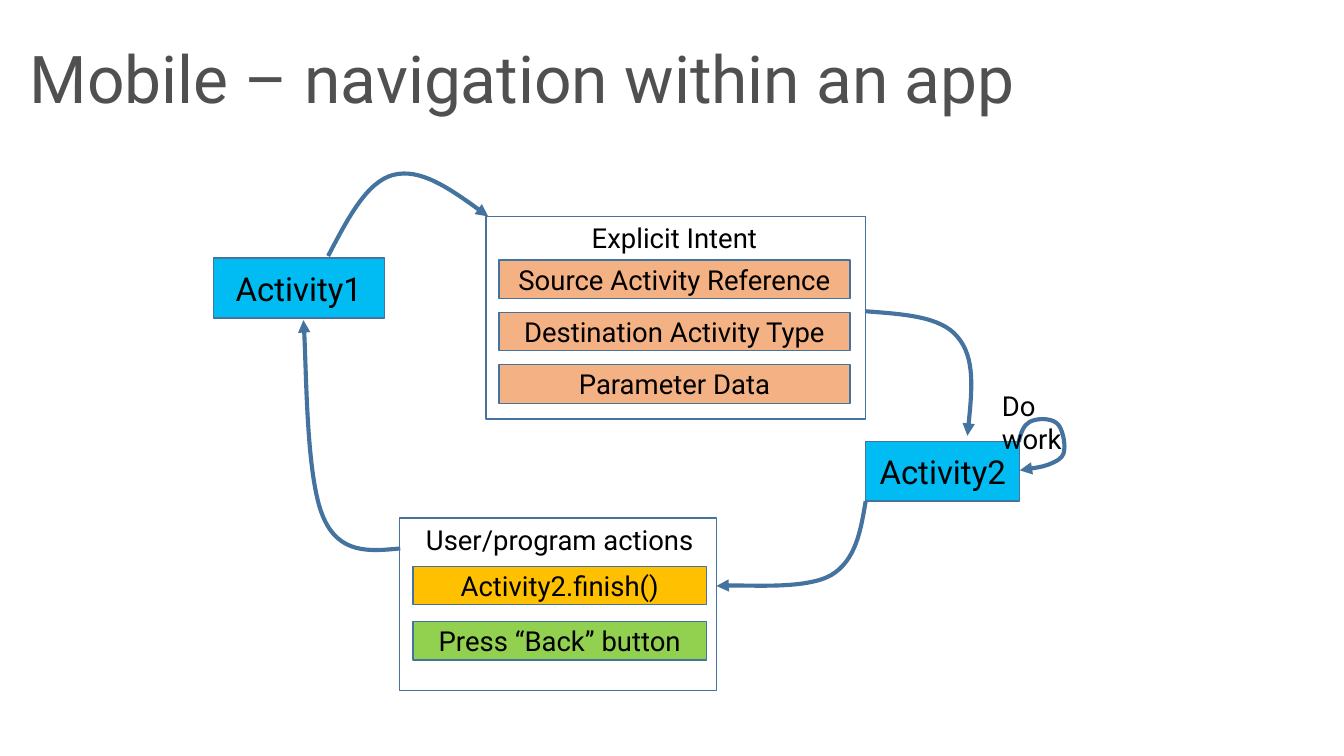
"""Build the slide that shows navigation between two activities of an app."""
from lxml import etree
from pptx import Presentation
from pptx.dml.color import RGBColor
from pptx.enum.shapes import MSO_SHAPE
from pptx.enum.text import MSO_ANCHOR, PP_ALIGN
from pptx.oxml.ns import qn
from pptx.util import Inches, Pt

RECTANGLE = MSO_SHAPE.RECTANGLE
TOP, MIDDLE = MSO_ANCHOR.TOP, MSO_ANCHOR.MIDDLE
LEFT, CENTER = PP_ALIGN.LEFT, PP_ALIGN.CENTER


def color(value):
    """Turn a hex string into a colour."""
    return RGBColor.from_string(value)


def write(frame, text, size=20, ink="000000", align=CENTER, anchor=TOP, inset=None, spacing=None):
    """Put one formatted paragraph into a text frame."""
    frame.word_wrap = True
    frame.vertical_anchor = anchor
    if inset is not None:
        frame.margin_left = frame.margin_right = Inches(inset)
        frame.margin_top = frame.margin_bottom = Inches(inset)
    paragraph = frame.paragraphs[0]
    paragraph.alignment = align
    paragraph.line_spacing = spacing
    run = paragraph.add_run()
    run.text = text
    run.font.name = "Roboto"
    run.font.size = Pt(size)
    run.font.color.rgb = color(ink)


class Diagram:
    """Hold the slide and the shared outline style."""

    outline = "43739E"
    bar_height = 0.39

    def __init__(self, slide):
        """Keep the shapes of the current slide."""
        self.shapes = slide.shapes

    def style(self, shape, fill=None, weight=1):
        """Give a shape its fill and outline."""
        shape.shadow.inherit = False
        if fill:
            shape.fill.solid()
            shape.fill.fore_color.rgb = color(fill)
        else:
            shape.fill.background()
        shape.line.color.rgb = color(self.outline)
        shape.line.width = Pt(weight)

    def label(self, box, text, **form):
        """Add a text box."""
        area = self.shapes.add_textbox(*map(Inches, box))
        write(area.text_frame, text, **form)

    def block(self, box, fill=None, text=None, **form):
        """Add a rectangle with optional centred text."""
        rectangle = self.shapes.add_shape(RECTANGLE, *map(Inches, box))
        self.style(rectangle, fill)
        if text:
            write(rectangle.text_frame, text, anchor=MIDDLE, **form)

    def panel(self, box, heading, bar_left, bar_width, first_top, step, bars):
        """Add a framed heading with evenly stacked bars."""
        self.block(box)
        self.label((bar_left, box[1], bar_width, 0.44), heading)
        for row, (text, fill) in enumerate(bars):
            top = first_top + row * step
            self.block((bar_left, top, bar_width, self.bar_height), fill, text)

    def curved_arrow(self, start, *points):
        """Draw cubic curves, three points each, ending in an arrowhead."""
        builder = self.shapes.build_freeform(*map(Inches, start))
        builder.add_line_segments([tuple(map(Inches, p)) for p in points], close=False)
        arrow = builder.convert_to_shape()
        self.style(arrow, weight=3)
        outline_path = next(arrow.element.iter(qn("a:path")))
        segments = outline_path.findall(qn("a:lnTo"))
        for first in range(0, len(segments), 3):
            curve = etree.SubElement(outline_path, qn("a:cubicBezTo"))
            for segment in segments[first:first + 3]:
                curve.append(segment[0])
                outline_path.remove(segment)
        line = next(arrow.element.iter(qn("a:ln")))
        etree.SubElement(line, qn("a:tailEnd"), type="triangle")


def main():
    """Compose and save the slide."""
    deck = Presentation()
    deck.slide_width, deck.slide_height = Inches(13.6), Inches(7.65)
    diagram = Diagram(deck.slides.add_slide(deck.slide_layouts[6]))

    diagram.label((0.3, 0.33, 13, 1), "Mobile – navigation within an app", size=48,
                  ink="505050", align=LEFT, anchor=MIDDLE, inset=0, spacing=0.9)

    diagram.block((2.16, 2.61, 1.73, 0.61), "00BCF2", "Activity1", size=24)
    diagram.block((8.76, 4.47, 1.56, 0.6), "00BCF2", "Activity2", size=24)

    intent_parts = ("Source Activity Reference", "Destination Activity Type", "Parameter Data")
    diagram.panel((4.92, 2.19, 3.84, 2.05), "Explicit Intent", 5.05, 3.55, 2.63, 0.53,
                  [(part, "F4B183") for part in intent_parts])
    diagram.panel((4.04, 5.24, 3.21, 1.75), "User/program actions", 4.18, 2.97, 5.73, 0.56,
                  [("Activity2.finish()", "FFC000"), ("Press “Back” button", "92D050")])

    diagram.curved_arrow((3.32, 2.59), (3.52, 2.21), (3.71, 1.84), (3.98, 1.77),
                         (4.25, 1.7), (4.6, 1.94), (4.94, 2.19))
    diagram.curved_arrow((8.76, 3.15), (9.14, 3.18), (9.52, 3.2), (9.69, 3.41),
                         (9.87, 3.62), (9.83, 4.02), (9.79, 4.41))
    diagram.curved_arrow((8.76, 5.07), (8.71, 5.37), (8.66, 5.67), (8.41, 5.82),
                         (8.16, 5.96), (7.44, 5.91), (7.25, 5.93))
    diagram.curved_arrow((4.05, 5.55), (3.74, 5.58), (3.43, 5.61), (3.27, 5.23),
                         (3.1, 4.84), (3.1, 3.56), (3.07, 3.24))
    diagram.curved_arrow((10.31, 4.47), (10.33, 4.38), (10.36, 4.3), (10.42, 4.27),
                         (10.49, 4.23), (10.63, 4.23), (10.69, 4.28),
                         (10.75, 4.32), (10.78, 4.48), (10.77, 4.55),
                         (10.77, 4.61), (10.73, 4.65), (10.66, 4.68),
                         (10.58, 4.72), (10.45, 4.74), (10.32, 4.76))
    diagram.label((10.04, 3.89, 1.18, 0.44), "Do work", align=LEFT)

    deck.save("out.pptx")


if __name__ == "__main__":
    main()
